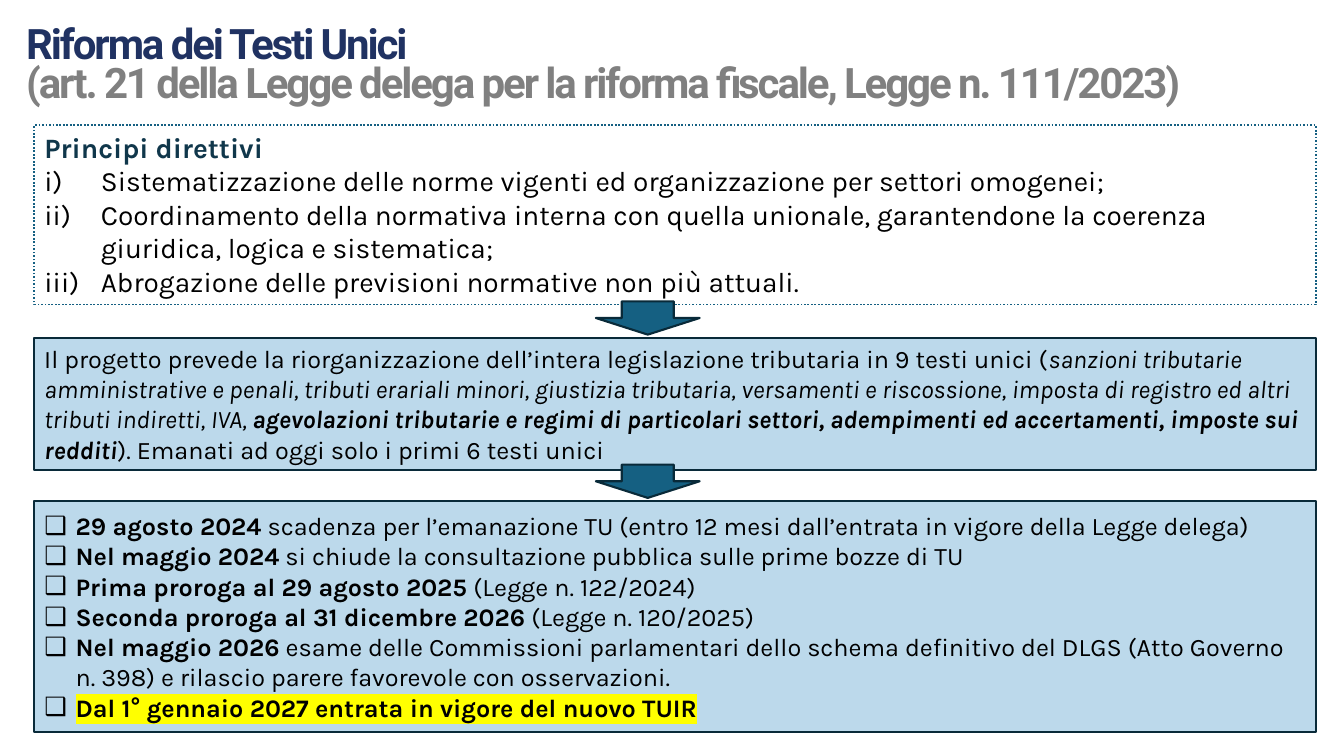
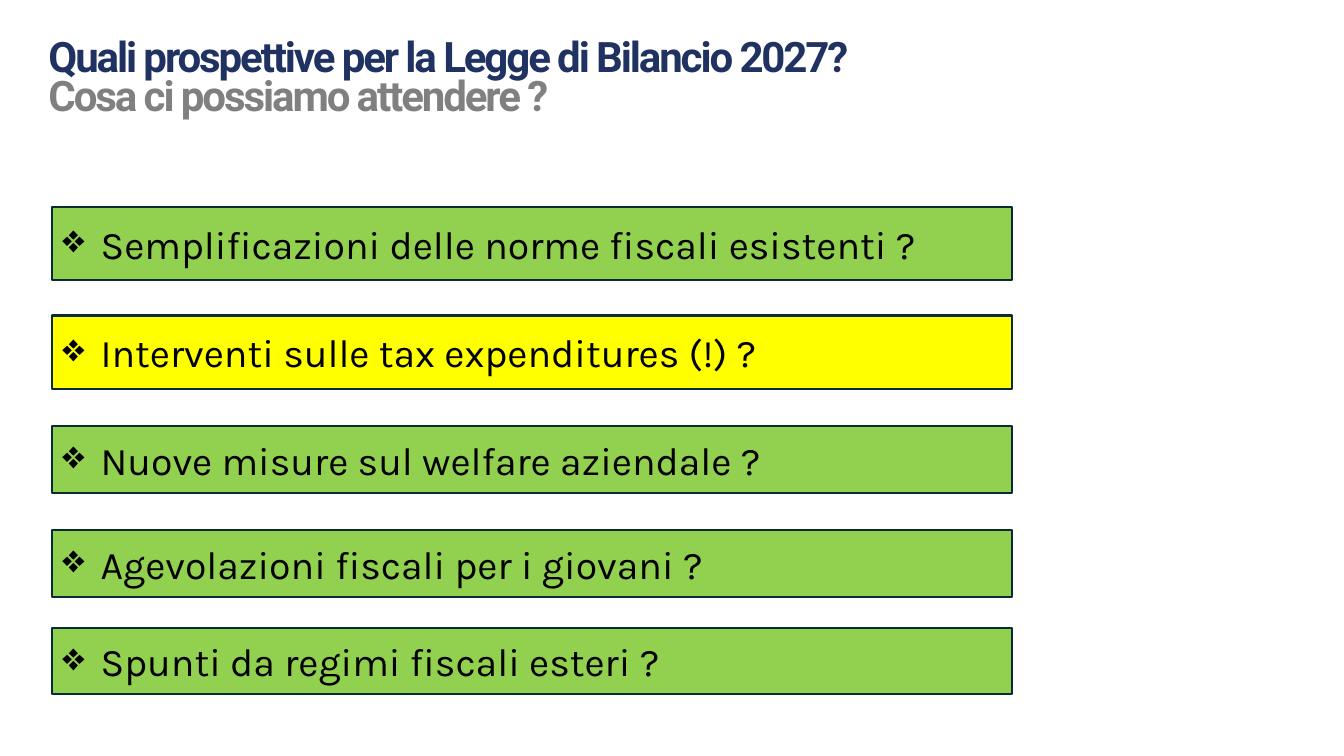
from lxml.etree import SubElement
from pptx import Presentation
from pptx.dml.color import RGBColor
from pptx.enum.dml import MSO_LINE
from pptx.enum.shapes import MSO_SHAPE
from pptx.enum.text import MSO_ANCHOR, MSO_AUTO_SIZE, PP_ALIGN
from pptx.oxml.ns import qn
from pptx.util import Inches, Pt

NAVY, GREY, TEAL, DARK_TEAL = "203262", "808080", "156082", "10374B"
OUTLINE, PALE_BLUE, GREEN, YELLOW, BLACK = "092A39", "BCD9EB", "92D050", "FFFF00", "000000"

PLAIN, BOLD, ITALIC = {}, {"bold": True}, {"italic": True}
BOLD_ITALIC = {"bold": True, "italic": True}
NO_BULLET = ("buNone", {}, 0)
ROMAN = ("buAutoNum", {"type": "romanLcParenR"}, 0.56)
SQUARE = ("buChar", {"char": "❑"}, 0.31)
DIAMOND = ("buChar", {"char": "❖"}, 0.38)

REFORM_TITLE = (
    "Riforma dei Testi Unici",
    "(art. 21 della Legge delega per la riforma fiscale, Legge n. 111/2023)",
)
PRINCIPLES_HEADING = "Principi direttivi"
PRINCIPLES = [
    "Sistematizzazione delle norme vigenti ed organizzazione per settori omogenei;",
    "Coordinamento della normativa interna con quella unionale, garantendone la coerenza "
    "giuridica, logica e sistematica;",
    "Abrogazione delle previsioni normative non più attuali.",
]
PROJECT = [
    ("Il progetto prevede la riorganizzazione dell’intera legislazione tributaria in 9 testi unici (", PLAIN),
    ("sanzioni tributarie amministrative e penali, tributi erariali minori, giustizia tributaria, "
     "versamenti e riscossione, imposta di registro ed altri tributi indiretti, IVA, ", ITALIC),
    ("agevolazioni tributarie e regimi di particolari settori, adempimenti ed accertamenti, "
     "imposte sui redditi", BOLD_ITALIC),
    ("). Emanati ad oggi solo i primi 6 testi unici", PLAIN),
]
DEADLINES = [
    ("29 agosto 2024", " scadenza per l’emanazione TU (entro 12 mesi dall’entrata in vigore della Legge delega)"),
    ("Nel maggio 2024", " si chiude la consultazione pubblica sulle prime bozze di TU"),
    ("Prima proroga al 29 agosto 2025", " (Legge n. 122/2024)"),
    ("Seconda proroga al 31 dicembre 2026", " (Legge n. 120/2025)"),
    ("Nel maggio 2026", " esame delle Commissioni parlamentari dello schema definitivo del DLGS "
     "(Atto Governo n. 398) e rilascio parere favorevole con osservazioni."),
]
ENTRY_INTO_FORCE = "Dal 1° gennaio 2027 entrata in vigore del nuovo TUIR"
ARROW_TOPS = (2.99, 4.61)

OUTLOOK_TITLE = ("Quali prospettive per la Legge di Bilancio 2027?", "Cosa ci possiamo attendere ?")
PROSPECTS = [
    ("Semplificazioni delle norme fiscali esistenti ?", GREEN, 2.05, 0.73),
    ("Interventi sulle tax expenditures (!) ?", YELLOW, 3.13, 0.73),
    ("Nuove misure sul welfare aziendale ?", GREEN, 4.23, 0.66),
    ("Agevolazioni fiscali per i giovani ?", GREEN, 5.26, 0.66),
    ("Spunti da regimi fiscali esteri ?", GREEN, 6.23, 0.66),
]


def rgb(value):
    return RGBColor.from_string(value)


def place(shape, box):
    for side, length in zip(("left", "top", "width", "height"), box):
        setattr(shape, side, Inches(length))


def paint(shape, fill=None, line=OUTLINE, weight=1.5, dash=None):
    if fill:
        shape.fill.solid()
        shape.fill.fore_color.rgb = rgb(fill)
    else:
        shape.fill.background()
    shape.line.color.rgb = rgb(line)
    shape.line.width = Pt(weight)
    if dash:
        shape.line.dash_style = dash


def add_preset(slide, preset, box, fill):
    shape = slide.shapes.add_shape(preset, *map(Inches, box))
    shape.shadow.inherit = False
    paint(shape, fill)
    return shape


def add_run(paragraph, text, size, font="Karla", color=BLACK, highlight=None, spacing=None, **style):
    run = paragraph.add_run()
    run.text = text
    settings = {"size": Pt(size), "name": font, "bold": False, "italic": False} | style
    for name, value in settings.items():
        setattr(run.font, name, value)
    run.font.color.rgb = rgb(color)
    properties = run.font._element
    if spacing:
        properties.set("spc", str(spacing))
    if highlight:
        mark = SubElement(properties, qn("a:highlight"))
        SubElement(mark, qn("a:srgbClr"), val=highlight)
        properties.find(qn("a:latin")).addprevious(mark)


def write(shape, paragraphs, size, anchor=MSO_ANCHOR.MIDDLE, line_spacing=None):
    frame = shape.text_frame
    settings = {"word_wrap": True, "auto_size": MSO_AUTO_SIZE.NONE, "vertical_anchor": anchor}
    for name, value in settings.items():
        setattr(frame, name, value)
    for index, (bullet, runs) in enumerate(paragraphs):
        paragraph = frame.add_paragraph() if index else frame.paragraphs[0]
        settings = {"alignment": PP_ALIGN.LEFT, "space_before": Pt(0), "line_spacing": line_spacing}
        for name, value in settings.items():
            setattr(paragraph, name, value)
        tag, attributes, indent = bullet
        properties = paragraph._p.get_or_add_pPr()
        properties.set("marL", str(Inches(indent)))
        properties.set("indent", str(-Inches(indent)))
        SubElement(properties, qn(f"a:{tag}"), attributes)
        for text, style in runs:
            add_run(paragraph, text, size, **style)


def add_slide(deck, layout, title, box):
    slide = deck.slides.add_slide(deck.slide_layouts[layout])
    place(slide.shapes.title, box)
    lines = [
        (NO_BULLET, [(text, {"font": "Roboto", "color": color, "bold": True, "spacing": -150})])
        for text, color in zip(title, (NAVY, GREY))
    ]
    write(slide.shapes.title, lines, 30, MSO_ANCHOR.TOP, Pt(28))
    return slide


def build_reform(deck):
    slide = add_slide(deck, 3, REFORM_TITLE, (0.16, 0.23, 12.26, 0.89))
    principles, deadlines = slide.placeholders[1], slide.placeholders[2]

    place(principles, (0.34, 1.24, 12.71, 1.78))
    paint(principles, line=TEAL, weight=1.25, dash=MSO_LINE.ROUND_DOT)
    heading = (NO_BULLET, [(PRINCIPLES_HEADING, {"color": DARK_TEAL, "bold": True})])
    write(principles, [heading] + [(ROMAN, [(text, PLAIN)]) for text in PRINCIPLES], 20, MSO_ANCHOR.TOP)

    place(deadlines, (0.34, 4.97, 12.71, 2.29))
    paint(deadlines, PALE_BLUE)
    dated = [(SQUARE, [(date, BOLD), (event, PLAIN)]) for date, event in DEADLINES]
    final = (SQUARE, [(ENTRY_INTO_FORCE, {"bold": True, "highlight": YELLOW})])
    write(deadlines, dated + [final], 18)

    project = add_preset(slide, MSO_SHAPE.RECTANGLE, (0.34, 3.35, 12.71, 1.31), PALE_BLUE)
    write(project, [(NO_BULLET, PROJECT)], 18)
    for top in ARROW_TOPS:
        add_preset(slide, MSO_SHAPE.DOWN_ARROW, (5.91, top, 1.03, 0.33), TEAL)


def build_outlook(deck):
    slide = add_slide(deck, 5, OUTLOOK_TITLE, (0.38, 0.36, 8.83, 0.89))
    for question, fill, top, height in PROSPECTS:
        prospect = add_preset(slide, MSO_SHAPE.RECTANGLE, (0.52, top, 9.52, height), fill)
        write(prospect, [(DIAMOND, [(question, PLAIN)])], 28)


def main():
    """Build the two slides on the tax reform and save them."""
    deck = Presentation()
    deck.slide_width, deck.slide_height = Inches(13.33), Inches(7.5)
    build_reform(deck)
    build_outlook(deck)
    deck.save("out.pptx")


if __name__ == "__main__":
    main()
